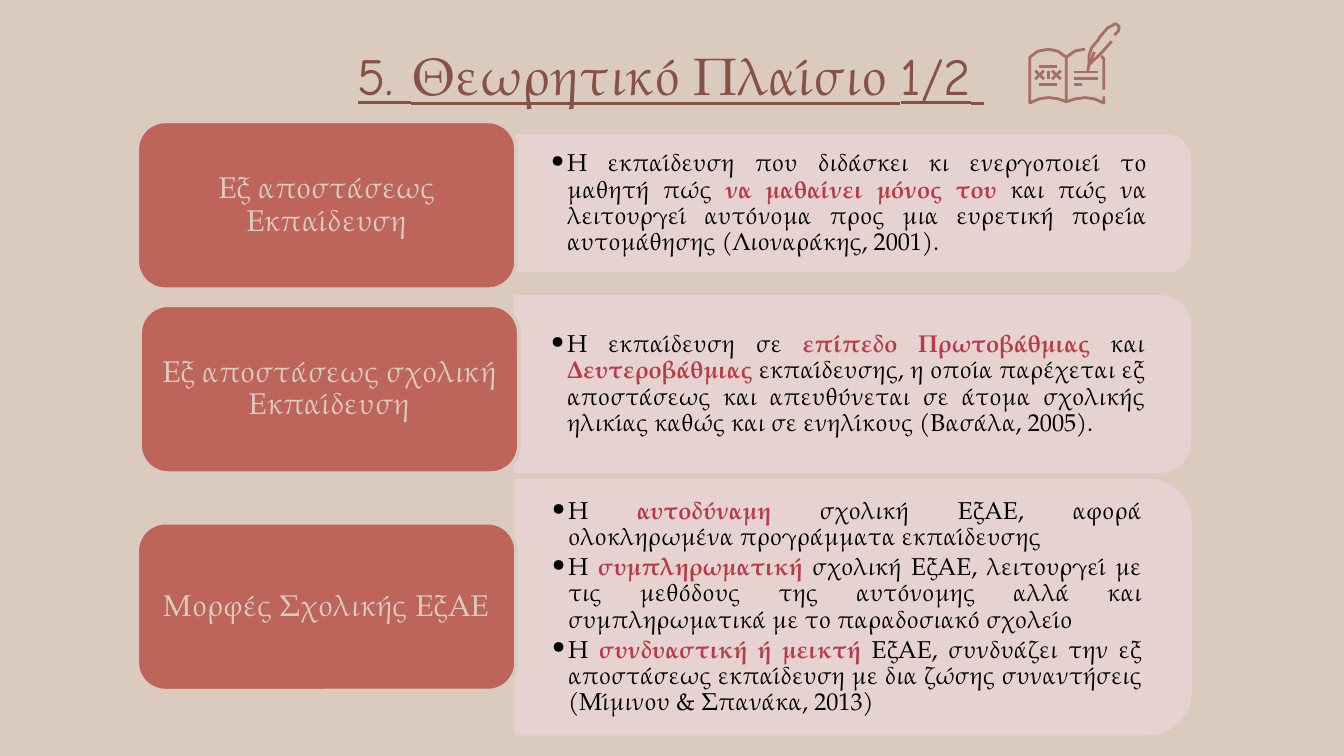
from dataclasses import dataclass

from lxml import etree
from pptx import Presentation
from pptx.dml.color import RGBColor
from pptx.enum.shapes import MSO_CONNECTOR, MSO_SHAPE
from pptx.enum.text import MSO_ANCHOR, MSO_AUTO_SIZE, PP_ALIGN
from pptx.oxml.ns import qn
from pptx.util import Pt

ROUND_RECT = MSO_SHAPE.ROUNDED_RECTANGLE
TOP_ROUND = MSO_SHAPE.ROUND_2_SAME_RECTANGLE
STRAIGHT = MSO_CONNECTOR.STRAIGHT
CENTER, JUSTIFY = PP_ALIGN.CENTER, PP_ALIGN.JUSTIFY
MIDDLE, BOTTOM = MSO_ANCHOR.MIDDLE, MSO_ANCHOR.BOTTOM
NO_FIT = MSO_AUTO_SIZE.NONE


@dataclass(frozen=True)
class Theme:
    background: str = "DBCABE"
    title: str = "865147"
    label: str = "BE655B"
    panel: str = "E8D3D2"
    text: str = "000000"
    accent: str = "B83C47"
    icon: str = "A76F64"
    serif: str = "TeX Gyre Pagella"
    sans: str = "Comic Neue"
    title_size: float = 28
    label_size: float = 16
    body_size: float = 13
    outline: float = 2
    stroke: float = 1.5


THEME = Theme()
CORNER_INSET = 0.05

TITLE = [("5. ", THEME.sans), ("Θεωρητικό Πλαίσιο ", THEME.serif),
         ("1/2", THEME.sans), (" ", THEME.serif)]

# label, label box, panel box, paragraphs
ROWS = [
    ("Εξ αποστάσεως Εκπαίδευση", (73.5, 65, 203, 90), (276, 73, 361, 72), [
        ["Η εκπαίδευση που διδάσκει κι ενεργοποιεί το μαθητή πώς ",
         "να μαθαίνει μόνος του ",
         "και πώς να λειτουργεί αυτόνομα προς μια ευρετική πορεία "
         "αυτομάθησης (Λιοναράκης, 2001). "]]),
    ("Εξ αποστάσεως σχολική Εκπαίδευση", (75, 163.5, 203, 90), (276, 159, 361, 93.5), [
        ["Η εκπαίδευση σε ", "επίπεδο Πρωτοβάθμιας ", "και ", "Δευτεροβάθμιας ",
         "εκπαίδευσης, η οποία παρέχεται εξ αποστάσεως και απευθύνεται σε άτομα "
         "σχολικής ηλικίας καθώς και σε ενηλίκους (Βασάλα, 2005). "]]),
    ("Μορφές Σχολικής ΕξΑΕ", (73.5, 280, 203, 90), (276.5, 257.5, 361, 135.5), [
        ["Η ", "αυτοδύναμη", " σχολική ΕξΑΕ, αφορά ολοκληρωμένα προγράμματα εκπαίδευσης"],
        ["Η ", "συμπληρωματική",
         " σχολική ΕξΑΕ, λειτουργεί με τις μεθόδους της αυτόνομης αλλά και "
         "συμπληρωματικά με το παραδοσιακό σχολείο"],
        ["Η ", "συνδυαστική ή μεικτή ",
         "ΕξΑΕ, συνδυάζει την εξ αποστάσεως εκπαίδευση με δια ζώσης συναντήσεις "
         "(Μίμινου & Σπανάκα, 2013)"]]),
]

ICON_CURVES = [
    [(0.7, 18.7), (5, 15.5), (10.8, 14.4), (15.8, 15.5), (20.2, 18.7), (20.2, 42.5),
     (15.8, 41), (10.8, 40.3), (5.8, 41), (0.7, 43.2), (0.7, 18.7)],
    [(20.2, 18.7), (25, 15.3), (30.2, 14.4)],
    [(20.2, 42.5), (25, 41), (30.2, 40.3), (35.3, 41), (40.3, 43.2), (40.3, 39.6)],
    [(40.3, 36), (40.3, 19.4), (39, 18)],
    [(31.7, 26.6), (32.4, 22.7), (32.4, 18), (33.8, 13.7), (37.4, 9.4), (38.2, 7.9),
     (42.5, 2.9), (46.8, 0.7), (48.6, 2.2), (48.2, 4.7), (46.1, 6.8)],
    [(44.6, 10.1), (39.6, 15.8), (32.4, 22.7), (35.3, 15.8)],
]
ICON_LINES = [
    (3.6, 25.9, 8.3, 30.4), (8.3, 25.9, 3.6, 30.4),
    (12.6, 25.9, 17.3, 30.4), (17.3, 25.9, 12.6, 30.4),
    (10.8, 25.9, 10.8, 30.4), (5.5, 23.8, 15.2, 23.8), (5.5, 33.1, 15.2, 33.1),
    (24.1, 26.6, 37, 26.6), (24.1, 29.9, 37, 29.9), (24.1, 33.1, 28.8, 33.1),
]


def rgb(value):
    return RGBColor.from_string(value)


def pts(*values):
    return [Pt(v) for v in values]


def apply(obj, values):
    for name, value in values.items():
        setattr(obj, name, value)


def add_run(p, text, size, color, **font):
    r = p.add_run()
    r.text = text
    apply(r.font, {"size": Pt(size), "name": THEME.serif, **font})
    r.font.color.rgb = rgb(color)


def set_frame(tf, anchor, dx, dy):
    apply(tf, {"word_wrap": True, "auto_size": NO_FIT, "vertical_anchor": anchor,
               "margin_left": Pt(dx), "margin_right": Pt(dx),
               "margin_top": Pt(dy), "margin_bottom": Pt(dy)})


def set_line(obj, color, width):
    obj.line.color.rgb = rgb(color)
    obj.line.width = Pt(width)


def add_block(slide, kind, box, fill, line):
    sp = slide.shapes.add_shape(kind, *pts(*box))
    sp.shadow.inherit = False
    sp.fill.solid()
    sp.fill.fore_color.rgb = rgb(fill)
    set_line(sp, line, THEME.outline)
    return sp


def add_bullet(p):
    pPr = p._p.get_or_add_pPr()
    pPr.set("marL", str(Pt(8.64)))
    pPr.set("indent", str(Pt(-8.64)))
    clr = etree.SubElement(pPr, qn("a:buClr"))
    etree.SubElement(clr, qn("a:srgbClr"), val=THEME.text)
    etree.SubElement(pPr, qn("a:buFont"), typeface=THEME.serif)
    etree.SubElement(pPr, qn("a:buChar"), char="•")


def add_title(slide, box):
    sp = slide.shapes.title
    apply(sp, dict(zip(("left", "top", "width", "height"), pts(*box))))
    set_frame(sp.text_frame, BOTTOM, 7.2, 7.2)
    p = sp.text_frame.paragraphs[0]
    apply(p, {"alignment": CENTER, "line_spacing": 0.8})
    for text, font in TITLE:
        add_run(p, text, THEME.title_size, THEME.title, name=font, underline=True)


def add_panel(slide, box, paragraphs):
    x, y, w, h = box
    turned = (x + (w - h) / 2, y + (h - w) / 2, h, w)
    sp = add_block(slide, TOP_ROUND, turned, THEME.panel, THEME.panel)
    sp.rotation = 90
    for clr in sp._element.spPr.iter(qn("a:srgbClr")):
        etree.SubElement(clr, qn("a:alpha"), val="90000")

    inset = h * CORNER_INSET
    tb = slide.shapes.add_textbox(*pts(x, y + inset, w - inset, h - 2 * inset))
    tf = tb.text_frame
    set_frame(tf, MIDDLE, 19.2, 9.9)
    for i, parts in enumerate(paragraphs):
        p = tf.add_paragraph() if i else tf.paragraphs[0]
        add_bullet(p)
        apply(p, {"level": 1, "alignment": JUSTIFY, "line_spacing": 0.9,
                  "space_after": Pt(2)})
        for j, text in enumerate(parts):
            strong = j % 2 == 1
            add_run(p, text, THEME.body_size,
                    THEME.accent if strong else THEME.text, bold=strong)


def add_label(slide, box, text):
    sp = add_block(slide, ROUND_RECT, box, THEME.label, THEME.background)
    set_frame(sp.text_frame, MIDDLE, 4.8, 2.4)
    p = sp.text_frame.paragraphs[0]
    apply(p, {"alignment": CENTER, "line_spacing": 0.9})
    add_run(p, text, THEME.label_size, THEME.background)


def add_book_icon(slide, x, y):
    for curve in ICON_CURVES:
        start, *rest = [pts(x + dx, y + dy) for dx, dy in curve]
        builder = slide.shapes.build_freeform(*start)
        builder.add_line_segments(rest, close=False)
        sp = builder.convert_to_shape()
        sp.shadow.inherit = False
        sp.fill.background()
        set_line(sp, THEME.icon, THEME.stroke)
    for x1, y1, x2, y2 in ICON_LINES:
        cx = slide.shapes.add_connector(STRAIGHT, *pts(x + x1, y + y1, x + x2, y + y2))
        set_line(cx, THEME.icon, THEME.stroke)
        etree.SubElement(cx._element.spPr, qn("a:effectLst"))


def main():
    prs = Presentation()
    prs.slide_width, prs.slide_height = pts(720, 405)
    slide = prs.slides.add_slide(prs.slide_layouts[5])
    slide.background.fill.solid()
    slide.background.fill.fore_color.rgb = rgb(THEME.background)
    add_title(slide, (156, 6, 407, 58))
    for label, label_box, panel_box, paragraphs in ROWS:
        add_panel(slide, panel_box, paragraphs)
        add_label(slide, label_box, label)
    add_book_icon(slide, 551, 12)
    prs.save("out.pptx")


if __name__ == "__main__":
    main()
